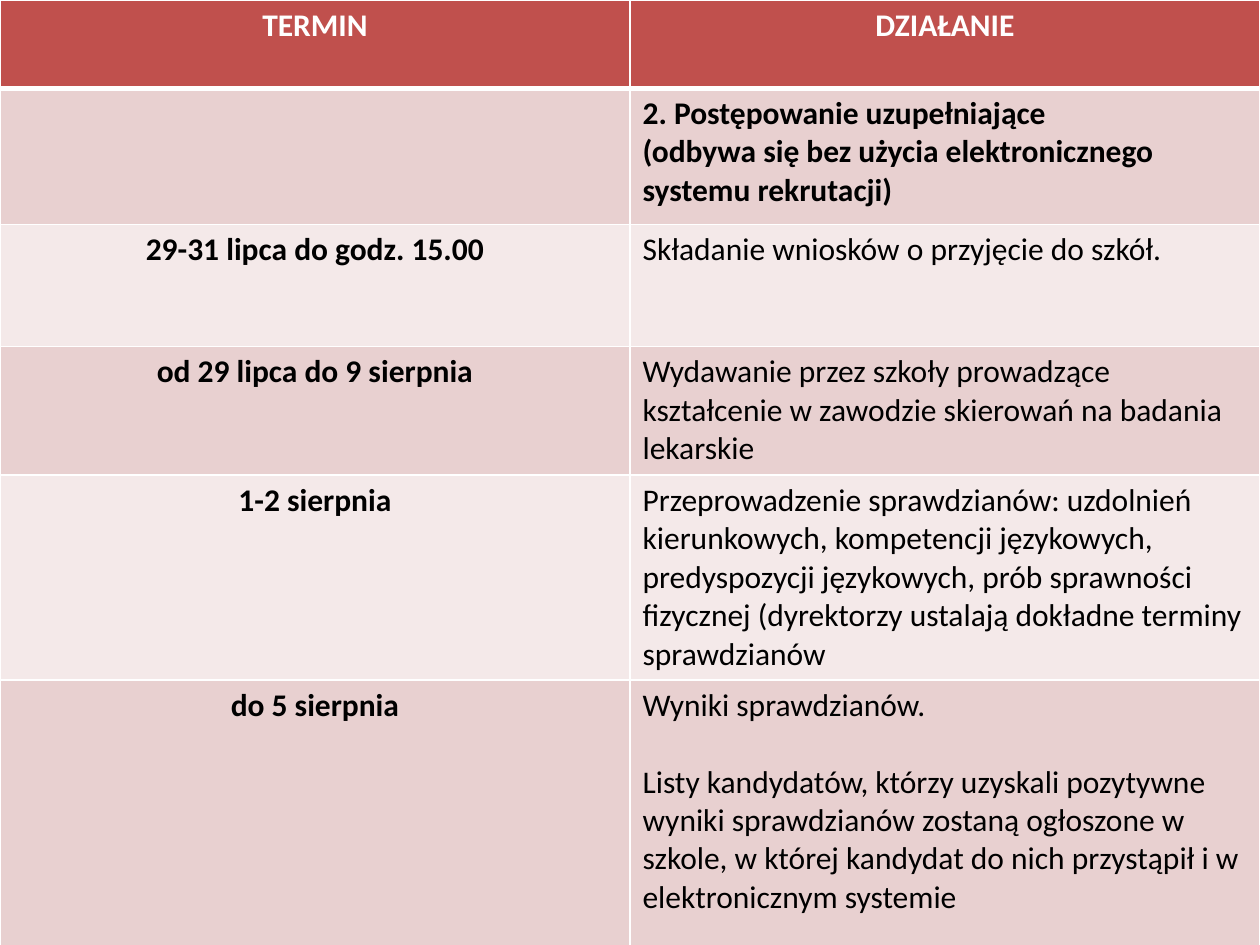
import pptx
import pptx.util
import pptx.dml.color
import pptx.enum.text
import pptx.oxml
import pptx.oxml.ns
from dataclasses import dataclass

Inches = pptx.util.Inches
Pt = pptx.util.Pt
RGB = pptx.dml.color.RGBColor.from_string
ALIGN = pptx.enum.text.PP_ALIGN


@dataclass(frozen=True)
class Theme:
    font: str = "Calibri"
    size: int = 18
    gap: int = 22
    head: str = "C0504D"
    dark: str = "E8D0D0"
    light: str = "F4E9E9"
    white: str = "FFFFFF"
    ink: str = "000000"
    thin: int = 1
    thick: int = 3


HEADS = ("TERMIN", "DZIAŁANIE")

# Height, date, paragraphs of the action
ROWS = [
    (1.08, "", ["2. Postępowanie uzupełniające",
                "(odbywa się bez użycia elektronicznego systemu rekrutacji)"]),
    (0.97, "29-31 lipca do godz. 15.00",
     ["Składanie wniosków o przyjęcie do szkół."]),
    (1.02, "od 29 lipca do 9 sierpnia",
     ["Wydawanie przez szkoły prowadzące kształcenie w zawodzie "
      "skierowań na badania lekarskie"]),
    (1.62, "1-2 sierpnia",
     ["Przeprowadzenie sprawdzianów: uzdolnień kierunkowych, kompetencji "
      "językowych, predyspozycji językowych, prób sprawności fizycznej "
      "(dyrektorzy ustalają dokładne terminy sprawdzianów"]),
    (2.11, "do 5 sierpnia",
     ["Wyniki sprawdzianów.",
      "Listy kandydatów, którzy uzyskali pozytywne wyniki sprawdzianów "
      "zostaną ogłoszone w szkole, w której kandydat do nich przystąpił "
      "i w elektronicznym systemie"]),
]
HEAD_HIGH = 0.7


class Deck:
    def __init__(self, theme):
        self.theme = theme
        self.prs = pptx.Presentation()
        self.prs.slide_width = Inches(10)
        self.prs.slide_height = Inches(7.5)
        self.slide = self.prs.slides.add_slide(self.prs.slide_layouts[6])

    def table(self, highs, wide, cols):
        frame = self.slide.shapes.add_table(
            len(highs), cols, 0, 0, Inches(wide), Inches(sum(highs)))
        for row, high in zip(frame.table.rows, highs):
            row.height = Inches(high)
        return frame.table

    def cell(self, cell, lines, fill, color, bold, center=False, gap=0):
        cell.fill.solid()
        cell.fill.fore_color.rgb = RGB(fill)
        frame = cell.text_frame
        frame.text = "\n".join(lines)
        for num, para in enumerate(frame.paragraphs):
            para.alignment = ALIGN.CENTER if center else ALIGN.LEFT
            para.space_before = Pt(gap if num else 0)
            para.font.name = self.theme.font
            para.font.size = Pt(self.theme.size)
            para.font.bold = bold
            para.font.color.rgb = RGB(color)

    def edges(self, cell, top, bottom):
        thin = self.theme.thin
        props = cell._tc.get_or_add_tcPr()
        sides = (("L", thin), ("R", thin), ("T", top), ("B", bottom))
        for spot, (side, width) in enumerate(sides):
            props.insert(spot, pptx.oxml.parse_xml(
                f'<a:ln{side} {pptx.oxml.ns.nsdecls("a")} w="{Pt(width)}">'
                f'<a:solidFill><a:srgbClr val="{self.theme.white}"/>'
                f'</a:solidFill></a:ln{side}>'))


def main():
    theme = Theme()
    deck = Deck(theme)
    table = deck.table([HEAD_HIGH] + [row[0] for row in ROWS], 10, 2)

    for col, head in enumerate(HEADS):
        deck.cell(table.cell(0, col), [head], theme.head, theme.white,
                  True, center=True)

    for num, (_, date, lines) in enumerate(ROWS, 1):
        fill = theme.dark if num % 2 else theme.light
        gap = theme.gap if date else 0
        deck.cell(table.cell(num, 0), [date], fill, theme.ink, True,
                  center=True)
        deck.cell(table.cell(num, 1), lines, fill, theme.ink, not date,
                  gap=gap)

    for num in range(len(ROWS) + 1):
        top = theme.thick if num == 1 else theme.thin
        bottom = theme.thick if num == 0 else theme.thin
        for col in range(len(HEADS)):
            deck.edges(table.cell(num, col), top, bottom)

    deck.prs.save("out.pptx")


if __name__ == "__main__":
    main()
